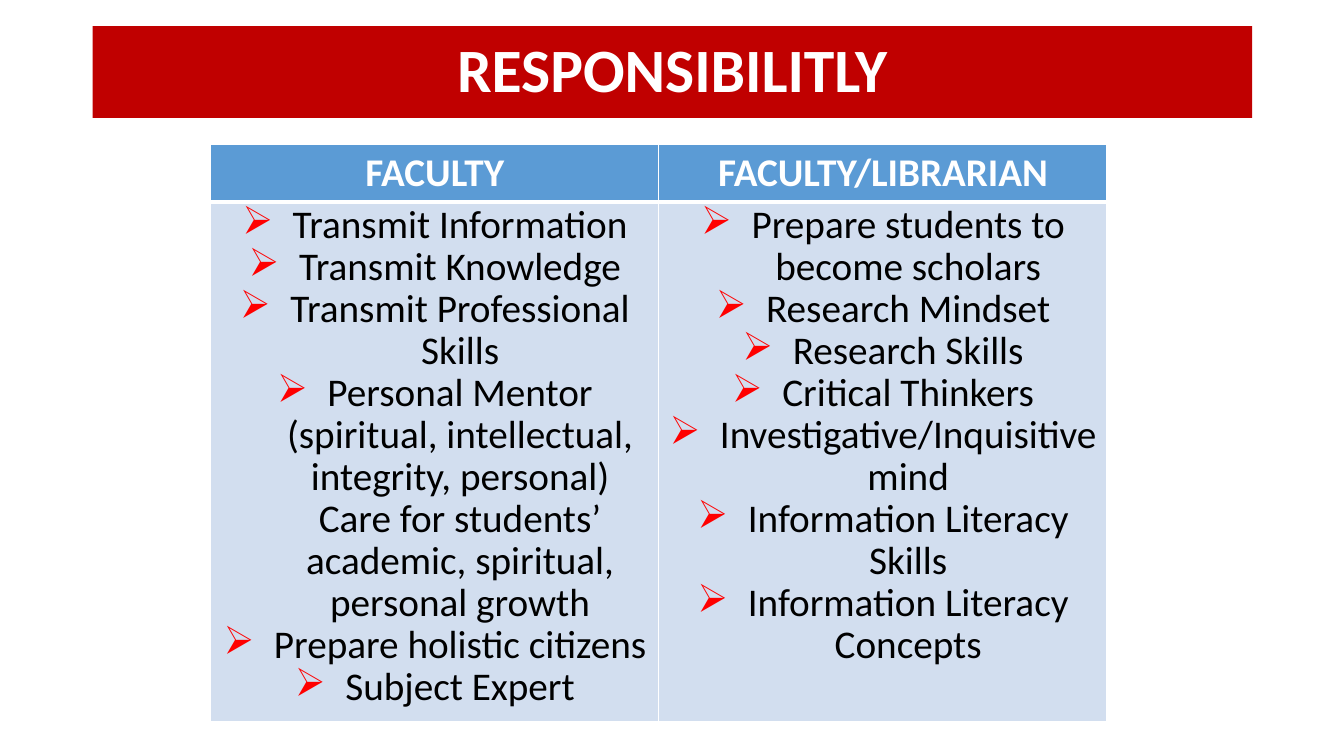
import dataclasses

import lxml.etree
import pptx
import pptx.dml.color
import pptx.enum.shapes
import pptx.enum.text
import pptx.oxml.ns
import pptx.util

Inches = pptx.util.Inches
Pt = pptx.util.Pt
qn = pptx.oxml.ns.qn


@dataclasses.dataclass(frozen=True)
class Theme:
    """Colours, font and type sizes of the slide."""
    font: str = "Calibri"
    banner: str = "C00000"
    header: str = "5B9BD5"
    body: str = "D2DEEF"
    light: str = "FFFFFF"
    dark: str = "000000"
    bullet: str = "FF0000"
    title_size: int = 44
    table_size: int = 28
    line_pitch: int = 30


THEME = Theme()

DUTIES = {
    "FACULTY": [
        "Transmit Information",
        "Transmit Knowledge",
        "Transmit Professional Skills",
        "Personal Mentor (spiritual, intellectual, integrity, personal) "
        "Care for students’ academic, spiritual, personal growth",
        "Prepare holistic citizens",
        "Subject Expert",
    ],
    "FACULTY/LIBRARIAN": [
        "Prepare students to become scholars",
        "Research Mindset",
        "Research Skills",
        "Critical Thinkers",
        "Investigative/Inquisitive mind",
        "Information Literacy Skills",
        "Information Literacy Concepts",
    ],
}


def rgb(value):
    """Return the colour object of a hex value."""
    return pptx.dml.color.RGBColor.from_string(value)


def fill_solid(target, color):
    """Fill a shape or cell with one colour."""
    target.fill.solid()
    target.fill.fore_color.rgb = rgb(color)


def write(p, text, size, color, bold):
    """Write one centred run into a paragraph."""
    p.alignment = pptx.enum.text.PP_ALIGN.CENTER
    r = p.add_run()
    r.text = text
    font = {"name": THEME.font, "size": Pt(size), "bold": bold}
    for name, value in font.items():
        setattr(r.font, name, value)
    r.font.color.rgb = rgb(color)


def add_color(parent, color):
    """Append a hex colour element to an XML parent."""
    lxml.etree.SubElement(parent, qn("a:srgbClr"), val=color)


def add_bullet(p):
    """Give a paragraph a coloured arrow bullet with a hanging indent."""
    p.line_spacing = Pt(THEME.line_pitch)
    pPr = p._p.get_or_add_pPr()
    pPr.set("marL", str(Inches(0.5)))
    pPr.set("indent", str(Inches(-0.5)))
    add_color(lxml.etree.SubElement(pPr, qn("a:buClr")), THEME.bullet)
    lxml.etree.SubElement(pPr, qn("a:buChar"), char="➢")


def set_borders(cell, **widths):
    """Draw the four cell borders, 1 pt unless a width is given."""
    tcPr = cell._tc.get_or_add_tcPr()
    for i, side in enumerate("LRTB"):
        ln = lxml.etree.Element(qn("a:ln" + side), w=str(Pt(widths.get(side, 1))))
        add_color(lxml.etree.SubElement(ln, qn("a:solidFill")), THEME.light)
        tcPr.insert(i, ln)


def add_banner(s, text, left, top, width, height):
    """Add the title banner in the given box."""
    sp = s.shapes.add_shape(pptx.enum.shapes.MSO_SHAPE.RECTANGLE,
                            left, top, width, height)
    sp.shadow.inherit = False
    sp.line.fill.background()
    fill_solid(sp, THEME.banner)
    tf = sp.text_frame
    frame = {"word_wrap": True, "vertical_anchor": pptx.enum.text.MSO_ANCHOR.MIDDLE}
    for name, value in frame.items():
        setattr(tf, name, value)
    p = tf.paragraphs[0]
    p.line_spacing = 0.9
    write(p, text, THEME.title_size, THEME.light, True)


def add_duties(s, duties, left, top, width, height):
    """Add the table of duties, one column per role, in the given box."""
    table = s.shapes.add_table(2, len(duties), left, top, width, height).table
    header_height = Inches(0.57)
    table.rows[0].height = header_height
    table.rows[1].height = height - header_height
    for col, (role, items) in enumerate(duties.items()):
        head, body = table.cell(0, col), table.cell(1, col)
        fill_solid(head, THEME.header)
        set_borders(head, B=3)
        write(head.text_frame.paragraphs[0], role, THEME.table_size, THEME.light, True)
        fill_solid(body, THEME.body)
        set_borders(body, T=3)
        tf = body.text_frame
        for i, item in enumerate(items):
            p = tf.add_paragraph() if i else tf.paragraphs[0]
            add_bullet(p)
            write(p, item, THEME.table_size, THEME.dark, False)


def main():
    """Build the slide and save it."""
    prs = pptx.Presentation()
    prs.slide_width, prs.slide_height = Inches(13.33), Inches(7.5)
    s = prs.slides.add_slide(prs.slide_layouts[6])
    add_banner(s, "RESPONSIBILITLY",
               Inches(0.92), Inches(0.26), Inches(11.5), Inches(0.91))
    add_duties(s, DUTIES, Inches(2.09), Inches(1.43), Inches(8.89), Inches(5.72))
    prs.save("out.pptx")


if __name__ == "__main__":
    main()
